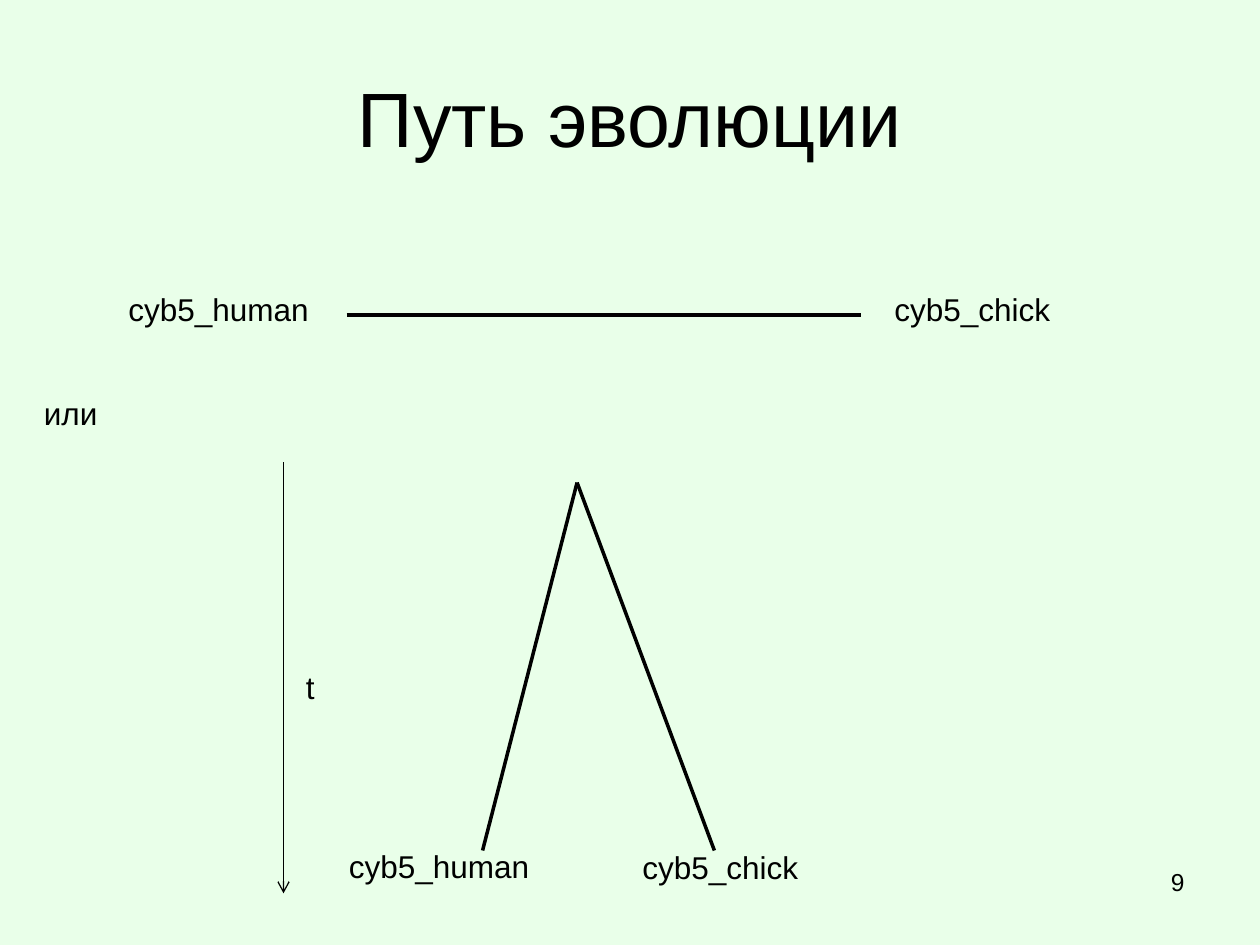
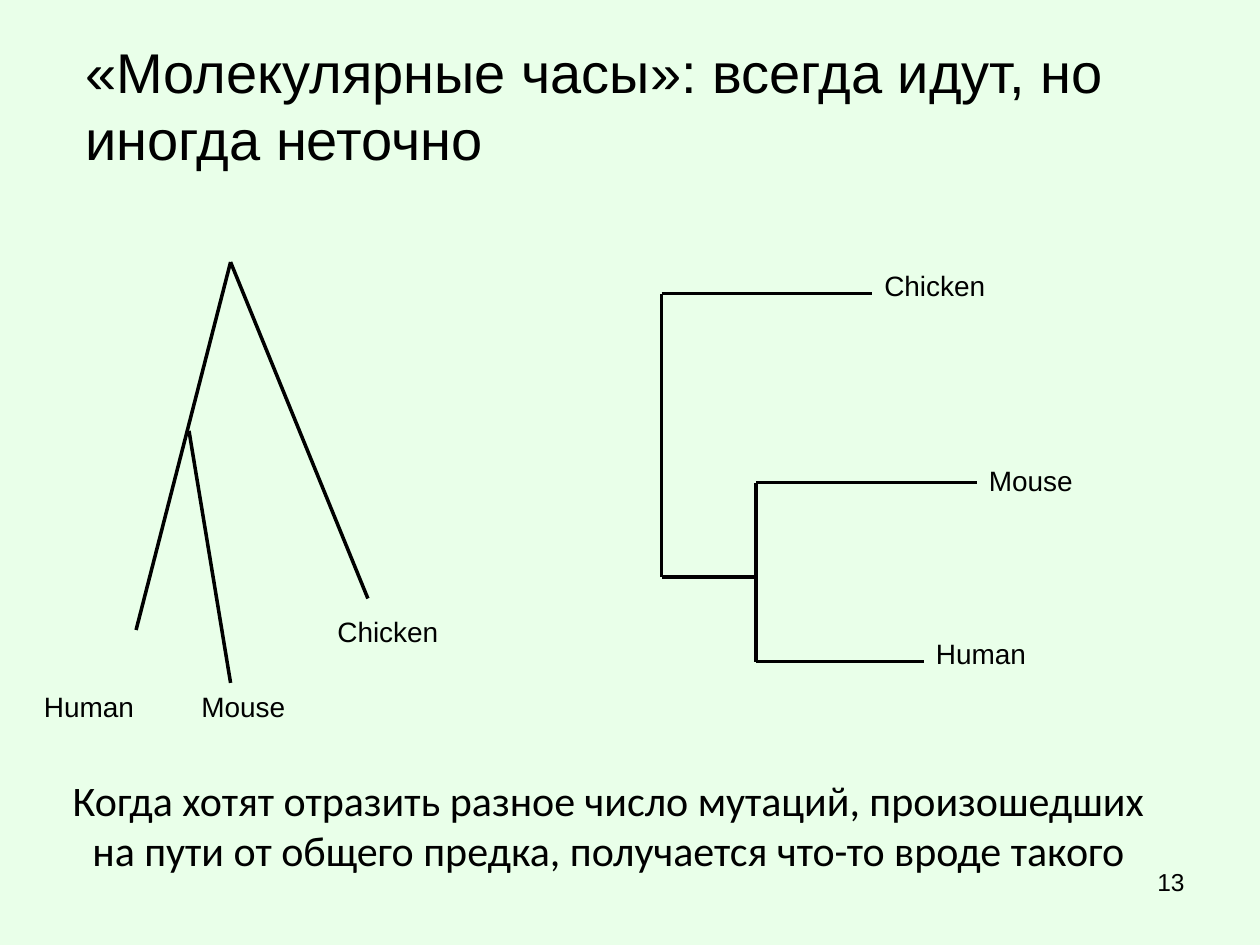
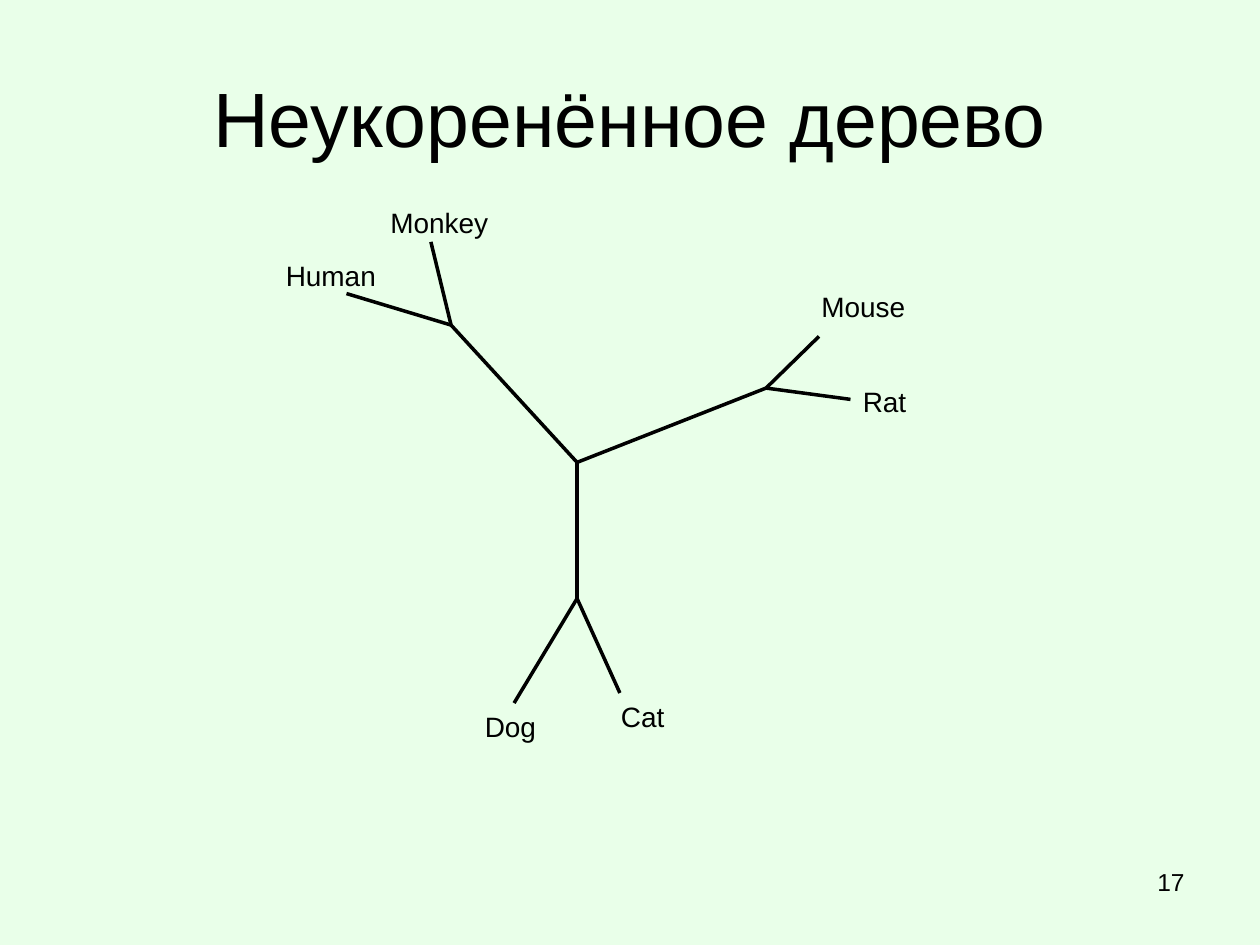
from dataclasses import dataclass

from lxml import etree
from pptx import Presentation
from pptx.dml.color import RGBColor
from pptx.enum.shapes import MSO_CONNECTOR as Connector
from pptx.enum.text import MSO_ANCHOR as Anchor, PP_ALIGN as Align
from pptx.oxml.ns import qn
from pptx.util import Inches, Pt

MINT = RGBColor(0xE9, 0xFF, 0xE9)
BLACK = RGBColor(0x00, 0x00, 0x00)
BRANCH_WIDTH = 2
AXIS_WIDTH = 0.75
LABEL_HEIGHT = 0.4


@dataclass
class Box:
    left: float
    top: float
    width: float
    height: float

    def inner(self, left, top, width, height=LABEL_HEIGHT):
        return Box(self.left + left, self.top + top, width, height)


TITLE_BOX = Box(0.5, 0.3, 9, 1.25)
NUMBER_BOX = Box(7.17, 6.83, 2.33, 0.52)


# Shared parts
def add_text(page, box, text, size=16, font="Arial", align=Align.LEFT, anchor=Anchor.TOP):
    shape = page.shapes.add_textbox(
        Inches(box.left), Inches(box.top), Inches(box.width), Inches(box.height))
    frame = shape.text_frame
    frame.word_wrap = True
    frame.vertical_anchor = anchor
    para = frame.paragraphs[0]
    para.alignment = align
    span = para.add_run()
    span.text = text
    for name, value in {"size": Pt(size), "name": font}.items():
        setattr(span.font, name, value)
    span.font.color.rgb = BLACK


def add_line(page, box, start, end, width=BRANCH_WIDTH, arrow=False):
    """Draw a line between two points measured from the box corner."""
    line = page.shapes.add_connector(
        Connector.STRAIGHT,
        Inches(box.left + start[0]), Inches(box.top + start[1]),
        Inches(box.left + end[0]), Inches(box.top + end[1]))
    line.line.color.rgb = BLACK
    line.line.width = Pt(width)
    if arrow:
        etree.SubElement(line.line._get_or_add_ln(), qn("a:tailEnd"), type="arrow")
    etree.SubElement(line._element.spPr, qn("a:effectLst"))


def add_title(page, text, box=TITLE_BOX, size=44, font="Arial"):
    add_text(page, box, text, size, font, Align.CENTER, Anchor.MIDDLE)


def add_page(deck, number):
    page = deck.slides.add_slide(deck.slide_layouts[6])
    page.background.fill.solid()
    page.background.fill.fore_color.rgb = MINT
    add_text(page, NUMBER_BOX, str(number), 14, align=Align.RIGHT)
    return page


def draw_tree(page, box, nodes, children, labels, size=16):
    """Join each parent node to its children, then write the tip labels."""
    for parent, names in children.items():
        for name in names:
            add_line(page, box, nodes[parent], nodes[name])
    for text, place in labels.items():
        add_text(page, box.inner(*place), text, size)


def draw_fork(page, box, x, tips):
    """Draw a vertical stem with one horizontal branch for each (end x, y)."""
    heights = [y for _, y in tips]
    add_line(page, box, (x, min(heights)), (x, max(heights)))
    for end, y in tips:
        add_line(page, box, (x, y), (end, y))


# Slide with the path between two proteins
def draw_path(page, box):
    add_text(page, box.inner(0, 0, 1.67), "cyb5_human", 18)
    add_line(page, box, (1.83, 0.25), (5.91, 0.25))
    add_text(page, box.inner(6.08, 0, 1.67), "cyb5_chick", 18)


def draw_time_axis(page, box):
    add_line(page, box, (0, 0), (0, box.height), AXIS_WIDTH, arrow=True)
    add_text(page, box.inner(0.08, 1.58, 0.42), "t", 18)


def build_evolution_path(deck):
    page = add_page(deck, 9)
    add_title(page, "Путь эволюции")
    draw_path(page, Box(0.92, 2.25, 7.75, 0.4))
    add_text(page, Box(0.25, 3.08, 1.25, LABEL_HEIGHT), "или", 18)
    draw_time_axis(page, Box(2.25, 3.67, 0.5, 3.42))
    draw_tree(
        page, Box(2.67, 3.83, 4, 3.25),
        nodes={"root": (1.91, 0), "human": (1.16, 2.92), "chick": (3, 2.92)},
        children={"root": ["human", "chick"]},
        labels={"cyb5_human": (0, 2.84, 1.67), "cyb5_chick": (2.33, 2.85, 1.67)},
        size=18)


# Slide with the molecular clock
def draw_slanted_tree(page, box):
    draw_tree(
        page, box,
        nodes={"root": (1.58, 0), "mammals": (1.25, 1.34), "human": (0.83, 2.92),
               "mouse": (1.58, 3.34), "chicken": (2.67, 2.67)},
        children={"root": ["human", "chicken"], "mammals": ["mouse"]},
        labels={"Human": (0, 3.34, 0.92), "Mouse": (1.25, 3.34, 1.25),
                "Chicken": (2.33, 2.75, 1.67)})


def draw_square_tree(page, box):
    mammals_x = 0.75
    chicken, mouse, human = (1.67, 0.25), (2.5, 1.75), (2.08, 3.17)
    draw_fork(page, box, 0, [chicken, (mammals_x, 2.5)])
    draw_fork(page, box, mammals_x, [mouse, human])
    for text, tip, top in [("Chicken", chicken, 0), ("Mouse", mouse, 1.55),
                           ("Human", human, 2.92)]:
        add_text(page, box.inner(tip[0], top, 1.25), text)


def build_molecular_clock(deck):
    page = add_page(deck, 13)
    add_text(page, Box(0.58, 0.25, 9, 1.18),
             "«Молекулярные часы»: всегда идут, но иногда неточно", 32)
    draw_slanted_tree(page, Box(0.25, 2.08, 4, 3.71))
    draw_square_tree(page, Box(5.25, 2.08, 3.75, 3.29))
    add_title(page,
              "Когда хотят отразить разное число мутаций, произошедших "
              "на пути от общего предка, получается что-то вроде такого",
              Box(0.33, 5.92, 9, 1.25), 24, "Calibri")


# Slide with the unrooted tree
def build_unrooted_tree(deck):
    page = add_page(deck, 17)
    add_title(page, "Неукоренённое дерево")
    draw_tree(
        page, Box(2.17, 1.58, 5.5, 4.37),
        nodes={"hub": (2.41, 2.09),
               "primates": (1.41, 1), "human": (0.58, 0.75), "monkey": (1.25, 0.34),
               "rodents": (3.91, 1.5), "mouse": (4.33, 1.09), "rat": (4.58, 1.59),
               "carnivores": (2.41, 3.17), "dog": (1.91, 4), "cat": (2.75, 3.92)},
        children={"hub": ["primates", "rodents", "carnivores"],
                  "primates": ["human", "monkey"],
                  "rodents": ["mouse", "rat"],
                  "carnivores": ["dog", "cat"]},
        labels={"Human": (0, 0.42, 0.92), "Monkey": (0.83, 0, 1),
                "Mouse": (4.25, 0.67, 1.25), "Rat": (4.58, 1.42, 0.67),
                "Dog": (1.58, 4, 0.67), "Cat": (2.66, 3.92, 0.67)})


def main():
    deck = Presentation()
    deck.slide_width, deck.slide_height = Inches(10), Inches(7.5)
    for build in (build_evolution_path, build_molecular_clock, build_unrooted_tree):
        build(deck)
    deck.save("out.pptx")


if __name__ == "__main__":
    main()
